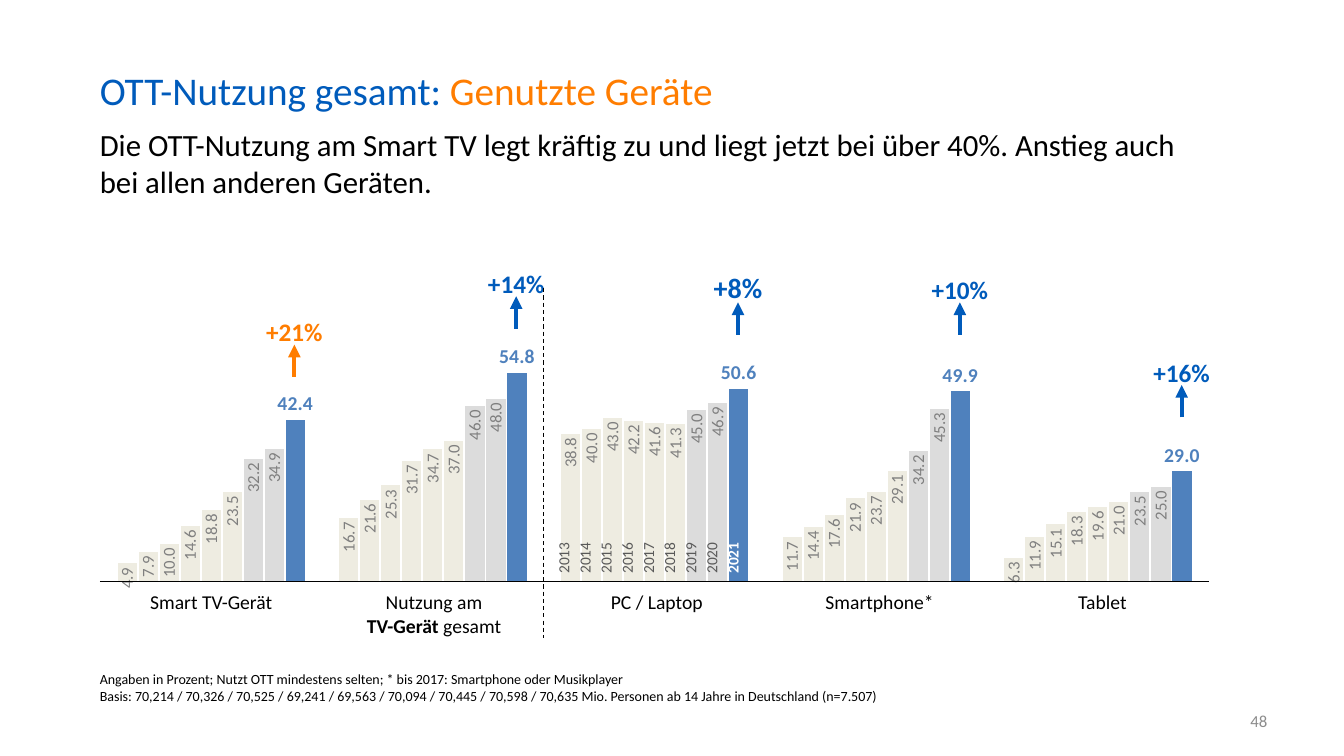
from lxml import etree
from pptx import Presentation
from pptx.chart.data import CategoryChartData
from pptx.dml.color import RGBColor
from pptx.enum.chart import XL_CHART_TYPE, XL_LABEL_POSITION, XL_TICK_LABEL_POSITION, XL_TICK_MARK
from pptx.enum.dml import MSO_LINE
from pptx.enum.shapes import MSO_CONNECTOR
from pptx.enum.text import MSO_ANCHOR, PP_ALIGN
from pptx.oxml.ns import qn
from pptx.util import Inches, Pt

FONT = "Calibri"
BLUE = RGBColor(0x00, 0x5B, 0xBB)
ORANGE = RGBColor(0xFF, 0x7D, 0x00)
BLACK = RGBColor(0x00, 0x00, 0x00)
WHITE = RGBColor(0xFF, 0xFF, 0xFF)
PAGE_GRAY = RGBColor(0x8C, 0x8C, 0x8C)
LABEL_GRAY = RGBColor(0x7F, 0x7F, 0x7F)
YEAR_GRAY = RGBColor(0x59, 0x59, 0x59)
BAR_BEIGE = RGBColor(0xEE, 0xEC, 0xE1)
BAR_GRAY = RGBColor(0xDC, 0xDC, 0xDC)
BAR_BLUE = RGBColor(0x4F, 0x81, 0xBD)

LEFT, CENTER, RIGHT = PP_ALIGN.LEFT, PP_ALIGN.CENTER, PP_ALIGN.RIGHT
TOP, MIDDLE, BOTTOM = MSO_ANCHOR.TOP, MSO_ANCHOR.MIDDLE, MSO_ANCHOR.BOTTOM
STRAIGHT = MSO_CONNECTOR.STRAIGHT
NO_GRID_STYLE = "{2D5ABB26-0587-4C30-8999-92F81FD0307C}"

MARGIN = 0.99
BODY_WIDTH = 10.95
DEVICE_WIDTH = 2.2
YEAR_WIDTH = 0.21
FIRST_MARKER_CENTER = 2.92
MARKER_WIDTH = 0.98

YEARS = [str(year) for year in range(2013, 2022)]
USAGE = [
    (4.9, 7.9, 10.0, 14.6, 18.8, 23.5, 32.2, 34.9, 42.4),
    (16.7, 21.6, 25.3, 31.7, 34.7, 37.0, 46.0, 48.0, 54.8),
    (38.8, 40.0, 43.0, 42.2, 41.6, 41.3, 45.0, 46.9, 50.6),
    (11.7, 14.4, 17.6, 21.9, 23.7, 29.1, 34.2, 45.3, 49.9),
    (6.3, 11.9, 15.1, 18.3, 19.6, 21.0, 23.5, 25.0, 29.0),
]
DEVICES = [
    [("Smart TV-Gerät", False)],
    [("Nutzung am\v", False), ("TV-Gerät", True), (" gesamt", False)],
    [("PC / Laptop", False)],
    [("Smartphone*", False)],
    [("Tablet", False)],
]
GROWTH = [
    ("+21%", 3.1, 18, ORANGE),
    ("+14%", 2.62, 18, BLUE),
    ("+8%", 2.64, 20, BLUE),
    ("+10%", 2.68, 18, BLUE),
    ("+16%", 3.5, 18, BLUE),
]
SUBTITLE = (
    "Die OTT-Nutzung am Smart TV legt kräftig zu und liegt jetzt bei über 40%. "
    "Anstieg auch bei allen anderen Geräten."
)
FOOTNOTE = (
    "Angaben in Prozent; Nutzt OTT mindestens selten; * bis 2017: Smartphone oder Musikplayer\v"
    "Basis: 70,214 / 70,326 / 70,525 / 69,241 / 69,563 / 70,094 / 70,445 / 70,598 / 70,635 "
    "Mio. Personen ab 14 Jahre in Deutschland (n=7.507)"
)


def style_font(font, size, color, bold=False):
    font.name = FONT
    font.size = Pt(size)
    font.color.rgb = color
    font.bold = bold


def add_text(shapes, box, text, size, color, bold=False, align=LEFT, anchor=TOP):
    shape = shapes.add_textbox(*map(Inches, box))
    frame = shape.text_frame
    frame.word_wrap = True
    frame.vertical_anchor = anchor
    frame.margin_left = frame.margin_right = frame.margin_top = frame.margin_bottom = 0
    paragraph = frame.paragraphs[0]
    paragraph.text = text
    paragraph.alignment = align
    style_font(paragraph.font, size, color, bold)
    return paragraph


def add_line(shapes, start, end, color, width):
    connector = shapes.add_connector(STRAIGHT, *map(Inches, start + end))
    connector.line.color.rgb = color
    connector.line.width = Pt(width)
    etree.SubElement(connector._element.spPr, qn("a:effectLst"))
    return connector


def add_growth_marker(slide, center, top, text, size, color):
    shapes = slide.shapes.add_group_shape().shapes
    height = 0.38 if size == 18 else 0.42
    box = (center - MARKER_WIDTH / 2, top, MARKER_WIDTH, height)
    add_text(shapes, box, text, size, color, True, CENTER, MIDDLE)
    tip = top + height - 0.06
    arrow = add_line(shapes, (center, tip + 0.32), (center, tip), color, 3)
    etree.SubElement(arrow.line._get_or_add_ln(), qn("a:tailEnd"), type="triangle")


def add_plain_table(slide, box, columns):
    frame = slide.shapes.add_table(1, columns, *map(Inches, box))
    frame._element.xpath(".//a:tableStyleId")[0].text = NO_GRID_STYLE
    frame.table.first_row = frame.table.horz_banding = False
    cells = list(frame.table.rows[0].cells)
    for cell in cells:
        cell.fill.background()
        cell.margin_left = cell.margin_right = cell.margin_top = cell.margin_bottom = 0
        cell.text_frame.paragraphs[0].alignment = CENTER
    return cells


def add_device_table(slide):
    cells = add_plain_table(slide, (MARGIN, 5.86, 2.21 * len(DEVICES), 0.48), len(DEVICES))
    for cell, runs in zip(cells, DEVICES):
        paragraph = cell.text_frame.paragraphs[0]
        for text, bold in runs:
            if text.endswith("\v"):
                paragraph.add_run().text = text.rstrip("\v")
                paragraph.add_line_break()
            else:
                run = paragraph.add_run()
                run.text = text
                run.font.bold = bold
        style_font(paragraph.font, 14, BLACK)


def add_year_table(slide):
    cells = add_plain_table(slide, (5.55, 5.24, YEAR_WIDTH * len(YEARS), 0.59), len(YEARS))
    for cell, year in zip(cells, YEARS):
        newest = year == YEARS[-1]
        cell.vertical_anchor = MIDDLE
        cell._tc.get_or_add_tcPr().set("vert", "vert270")
        paragraph = cell.text_frame.paragraphs[0]
        paragraph.text = year
        paragraph.line_spacing = Pt(10)
        style_font(paragraph.font, 11, WHITE if newest else YEAR_GRAY, newest)


def set_plot_area(chart, **shares):
    plot_area = chart._chartSpace.chart.plotArea
    for old_layout in plot_area.findall(qn("c:layout")):
        plot_area.remove(old_layout)
    layout = etree.Element(qn("c:layout"))
    manual = etree.SubElement(layout, qn("c:manualLayout"))
    settings = {"layoutTarget": "inner", "xMode": "edge", "yMode": "edge", **shares}
    for name, value in settings.items():
        etree.SubElement(manual, qn(f"c:{name}"), val=str(value))
    plot_area.insert(0, layout)


def style_series(series, color, newest):
    series.format.fill.solid()
    series.format.fill.fore_color.rgb = color
    labels = series.data_labels
    labels.show_value = True
    labels.number_format = "0.0"
    labels.number_format_is_linked = False
    if newest:
        labels.position = XL_LABEL_POSITION.OUTSIDE_END
        style_font(labels.font, 14, BAR_BLUE, True)
    else:
        labels.position = XL_LABEL_POSITION.INSIDE_END
        style_font(labels.font, 12, LABEL_GRAY)
        body = labels._element.xpath("./c:txPr/a:bodyPr")[0]
        body.set("rot", "-5400000")
        body.set("vert", "horz")


def add_usage_chart(slide):
    data = CategoryChartData(number_format="0.0")
    data.categories = [str(number) for number in range(1, len(USAGE) + 1)]
    for year, values in zip(YEARS, zip(*USAGE)):
        data.add_series(year, values)
    box = map(Inches, (0.66, 1.97, 12.45, 4.49))
    chart = slide.shapes.add_chart(XL_CHART_TYPE.COLUMN_CLUSTERED, *box, data).chart
    chart.has_legend = chart.has_title = False
    style_font(chart.font, 18, BLACK)
    plot = chart.plots[0]
    plot.gap_width, plot.overlap, plot.vary_by_categories = 180, -10, False
    colors = [BAR_BEIGE] * 6 + [BAR_GRAY] * 2 + [BAR_BLUE]
    for series, color in zip(plot.series, colors):
        style_series(series, color, color == BAR_BLUE)
    category_axis, value_axis = chart.category_axis, chart.value_axis
    category_axis.tick_label_position = XL_TICK_LABEL_POSITION.NONE
    category_axis.major_tick_mark = XL_TICK_MARK.NONE
    category_axis.format.line.fill.background()
    value_axis.minimum_scale, value_axis.maximum_scale = 0, 75
    value_axis.has_major_gridlines = value_axis.visible = False
    set_plot_area(chart, x=0.027, y=0.214, w=0.883, h=0.634)


def main():
    presentation = Presentation()
    presentation.slide_width, presentation.slide_height = Inches(13.33), Inches(7.5)
    slide = presentation.slides.add_slide(presentation.slide_layouts[6])
    shapes = slide.shapes
    add_text(shapes, (9.56, 6.95, 3.01, 0.4), "48", 12, PAGE_GRAY, align=RIGHT, anchor=MIDDLE)
    add_usage_chart(slide)
    title = add_text(shapes, (MARGIN, 0.66, 12.28, 0.59), "OTT-Nutzung gesamt: ", 28, BLUE)
    topic = title.add_run()
    topic.text = "Genutzte Geräte"
    topic.font.color.rgb = ORANGE
    add_text(shapes, (MARGIN, 1.25, BODY_WIDTH, 0.79), SUBTITLE, 22, BLACK)
    add_text(shapes, (MARGIN, 6.68, BODY_WIDTH, 0.31), FOOTNOTE, 10, BLACK, anchor=BOTTOM)
    add_line(shapes, (MARGIN, 5.77), (MARGIN + 5 * DEVICE_WIDTH, 5.77), BLACK, 0.25)
    add_device_table(slide)
    for index, (text, top, size, color) in enumerate(GROWTH):
        center = FIRST_MARKER_CENTER + index * DEVICE_WIDTH
        add_growth_marker(slide, center, top, text, size, color)
    add_year_table(slide)
    divider = add_line(shapes, (5.39, 2.86), (5.39, 6.33), BLACK, 0.75)
    divider.line.dash_style = MSO_LINE.DASH
    presentation.save("out.pptx")


if __name__ == "__main__":
    main()
